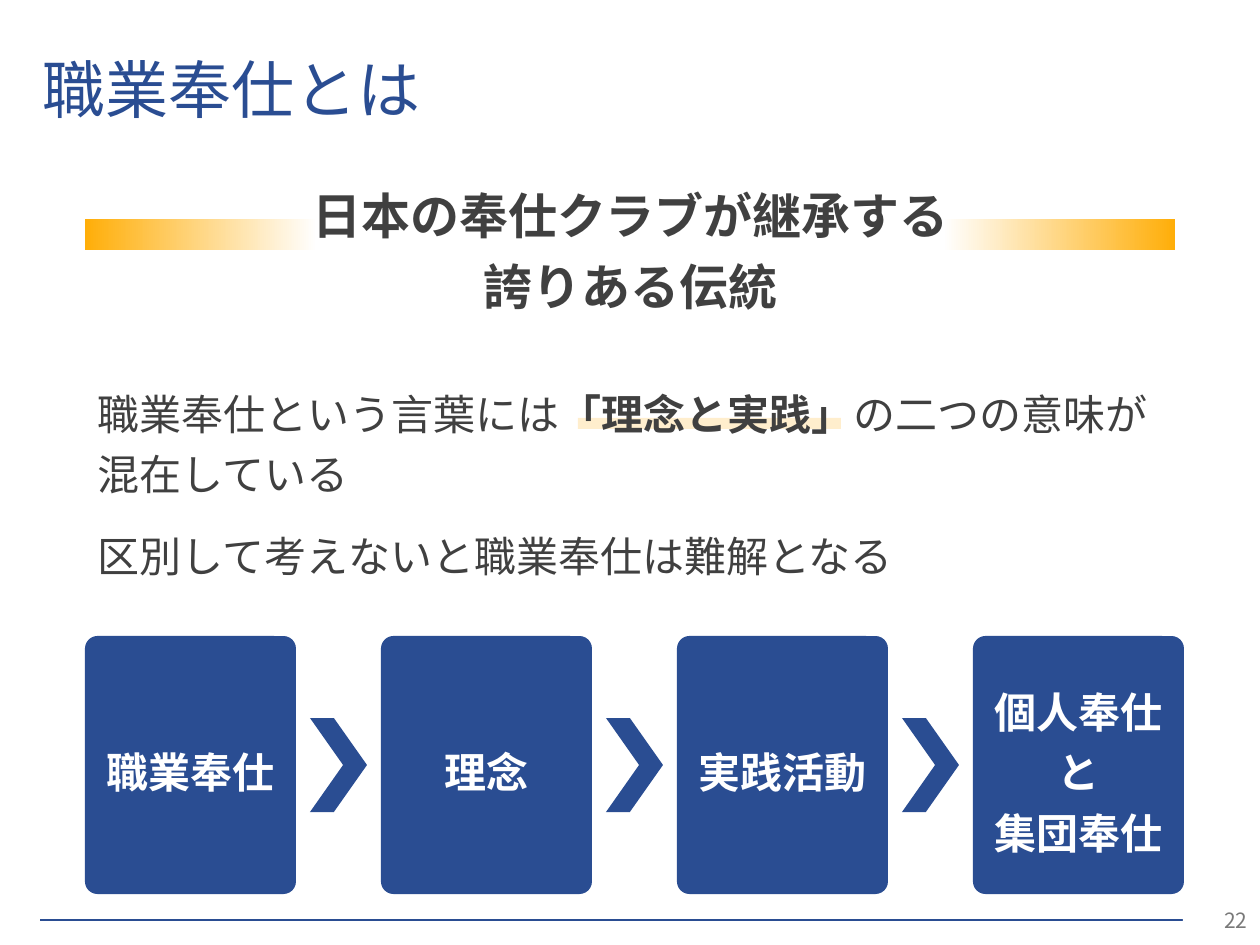
from dataclasses import dataclass

from lxml import etree
from pptx import Presentation
from pptx.dml.color import RGBColor
from pptx.enum.shapes import MSO_CONNECTOR, MSO_SHAPE
from pptx.enum.text import MSO_ANCHOR, MSO_AUTO_SIZE, PP_ALIGN
from pptx.oxml.ns import qn
from pptx.util import Emu, Inches, Pt

RECT, ROUNDED, CHEVRON = MSO_SHAPE.RECTANGLE, MSO_SHAPE.ROUNDED_RECTANGLE, MSO_SHAPE.CHEVRON
LEFT, CENTER, RIGHT = PP_ALIGN.LEFT, PP_ALIGN.CENTER, PP_ALIGN.RIGHT
MIDDLE, TOP = MSO_ANCHOR.MIDDLE, MSO_ANCHOR.TOP

FONT = "Noto Sans CJK JP"
BLUE, ORANGE, WHITE, DARK, GREY = "2A4D92", "FFAE09", "FFFFFF", "404040", "797979"
PX_PER_INCH = 126
STEP_PITCH = 296


@dataclass
class Box:
    x: int
    y: int
    w: int
    h: int

    def emu(self) -> tuple:
        return tuple(px(n) for n in (self.x, self.y, self.w, self.h))


@dataclass
class Style:
    size: int
    color: str
    bold: bool = False
    align: PP_ALIGN = LEFT
    spacing: float = 1.0
    after: int = 0


def px(n: int) -> Emu:
    return Emu(round(n * 914400 / PX_PER_INCH))


def rgb(value: str) -> RGBColor:
    return RGBColor.from_string(value)


def add_run(p, text: str, style: Style, bold: bool) -> None:
    r = p.add_run()
    r.text = text
    r.font.size = Pt(style.size)
    r.font.bold = bold
    r.font.color.rgb = rgb(style.color)
    r.font.name = FONT
    etree.SubElement(r.font._element, qn("a:ea"), typeface=FONT)


def write(tf, paragraphs: list, style: Style, anchor=TOP, wrap: bool = True) -> None:
    """Write paragraphs, each a list of (text, bold) runs; "\\n" breaks a line."""
    tf.word_wrap = wrap
    tf.auto_size = MSO_AUTO_SIZE.NONE
    tf.vertical_anchor = anchor
    for i, runs in enumerate(paragraphs):
        p = tf.paragraphs[0] if i == 0 else tf.add_paragraph()
        p.alignment = style.align
        p.line_spacing = style.spacing
        p.space_before = Pt(0)
        p.space_after = Pt(style.after)
        for text, bold in runs:
            for j, line in enumerate(text.split("\n")):
                if j:
                    p.add_line_break()
                add_run(p, line, style, bold)


def plain(style: Style, *lines: str) -> list:
    return [[(line, style.bold)] for line in lines]


def add_block(s, kind, box: Box, fill: str, adj: float | None = None):
    sp = s.shapes.add_shape(kind, *box.emu())
    sp.shadow.inherit = False
    sp.line.fill.background()
    sp.fill.solid()
    sp.fill.fore_color.rgb = rgb(fill)
    if adj is not None:
        sp.adjustments[0] = adj
    return sp


def add_gradient_bar(s, box: Box, start: str, end: str) -> None:
    sp = add_block(s, RECT, box, start)
    sp.fill.gradient()
    sp.fill.gradient_angle = 0
    for stop, color, position in zip(sp.fill.gradient_stops, (start, end), (0, 1)):
        stop.color.rgb = rgb(color)
        stop.position = position


def add_text(s, box: Box, paragraphs: list, style: Style, wrap: bool = True) -> None:
    sp = s.shapes.add_textbox(*box.emu())
    write(sp.text_frame, paragraphs, style, wrap=wrap)


def add_step(s, box: Box, lines: tuple, style: Style) -> None:
    sp = add_block(s, ROUNDED, box, BLUE, 0.059)
    write(sp.text_frame, plain(style, *lines), style, MIDDLE, wrap=False)
    sp.text_frame.margin_top = Inches(0.08)


def add_rule(s, x1: int, x2: int, y: int) -> None:
    line = s.shapes.add_connector(MSO_CONNECTOR.STRAIGHT, px(x1), px(y), px(x2), px(y))
    line.line.color.rgb = rgb(BLUE)
    line.line.width = Pt(1)
    etree.SubElement(line._element.spPr, qn("a:effectLst"))


def main() -> None:
    prs = Presentation()
    prs.slide_width, prs.slide_height = Inches(10), Inches(7.5)
    s = prs.slides.add_slide(prs.slide_layouts[5])

    # Footer rule and page number
    add_rule(s, 1183, 40, 920)
    number = Style(12, GREY, align=RIGHT)
    sp = add_block(s, RECT, Box(1183, 895, 77, 50), WHITE)
    write(sp.text_frame, plain(number, "22"), number, MIDDLE)

    # Title
    title = s.shapes.title
    title.left, title.top, title.width, title.height = Box(30, 55, 1225, 76).emu()
    heading = Style(36, BLUE, spacing=0.9)
    write(title.text_frame, plain(heading, "職業奉仕とは"), heading, MIDDLE)

    # Headline between two fading bars
    headline = Style(28, DARK, True, CENTER, 1.2, 12)
    add_text(s, Box(296, 168, 669, 152),
             plain(headline, "日本の奉仕クラブが継承する\n誇りある伝統"), headline, wrap=False)
    add_gradient_bar(s, Box(85, 219, 232, 31), ORANGE, WHITE)
    add_gradient_bar(s, Box(943, 219, 232, 31), WHITE, ORANGE)

    # Highlighter stroke behind the key phrase
    marker = add_block(s, RECT, Box(578, 418, 263, 11), ORANGE)
    color = marker._element.spPr.find(qn("a:solidFill"))[0]
    etree.SubElement(color, qn("a:alpha"), val="20000")

    # Explanation
    add_text(s, Box(85, 372, 1090, 214), [
        [("職業奉仕という言葉には", False), ("「理念と実践」", True),
         ("の二つの意味が混在している", False)],
        [("区別して考えないと職業奉仕は難解となる", False)],
    ], Style(24, DARK, spacing=1.2, after=12))

    # Steps joined by chevrons
    step = Style(24, WHITE, True, CENTER, 1.2)
    steps = [("職業奉仕",), ("理念",), ("実践活動",), ("個人奉仕", "と", "集団奉仕")]
    for i, lines in enumerate(steps):
        if i:
            add_block(s, CHEVRON, Box(14 + i * STEP_PITCH, 718, 57, 94), BLUE, 0.581)
        add_step(s, Box(85 + i * STEP_PITCH, 636, 211, 258), lines, step)

    prs.save("out.pptx")


if __name__ == "__main__":
    main()
